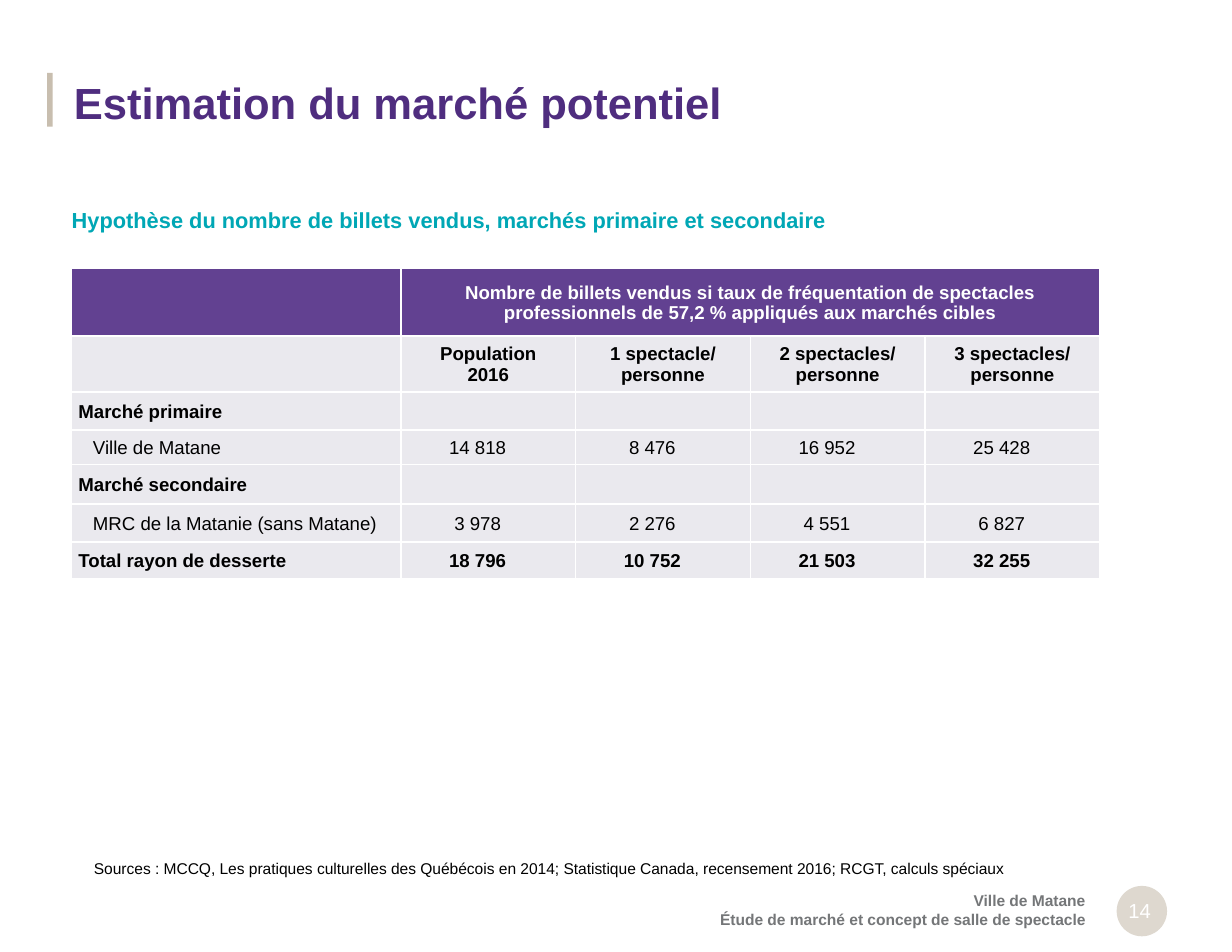
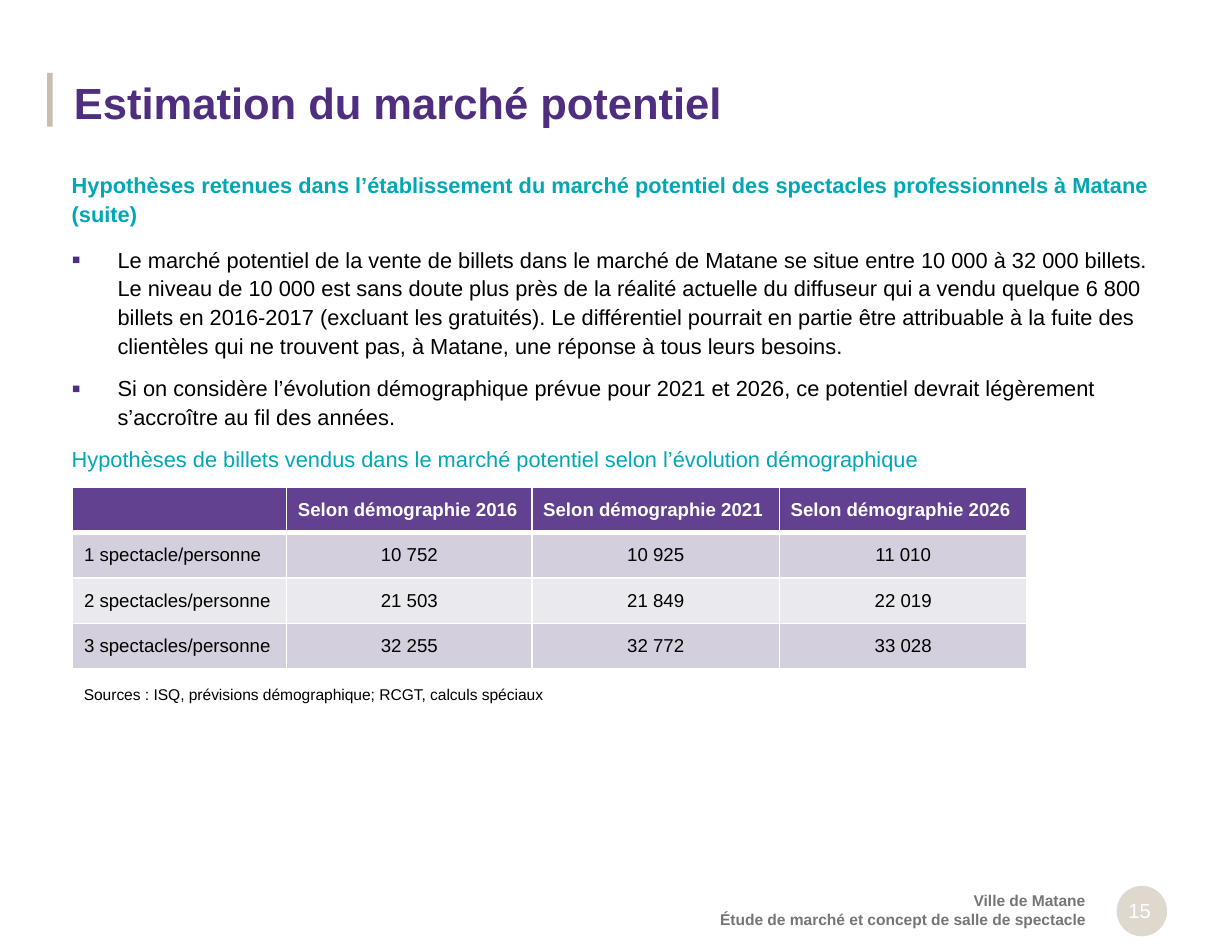
import copy
from dataclasses import dataclass
from typing import Any, Optional

import pptx
import pptx.dml.color
import pptx.enum.shapes
import pptx.enum.text
import pptx.oxml
import pptx.oxml.ns
import pptx.util
from lxml import etree

Inches = pptx.util.Inches
Align = pptx.enum.text.PP_ALIGN
Anchor = pptx.enum.text.MSO_ANCHOR
Preset = pptx.enum.shapes.MSO_SHAPE
qn = pptx.oxml.ns.qn


@dataclass(frozen=True)
class Theme:
    font: str = "Arial"
    purple: str = "4F2D7F"
    header: str = "624191"
    teal: str = "00A7B5"
    sand: str = "C8BEAF"
    disc: str = "DED8CF"
    grey: str = "747678"
    light: str = "EAE9EE"
    band: str = "D3CFDC"
    white: str = "FFFFFF"
    black: str = "000000"
    title_size: float = 28
    body_size: float = 14
    page_size: float = 13
    table_size: float = 12
    small_size: float = 10


THEME = Theme()


@dataclass(frozen=True)
class Box:
    left: float
    top: float
    width: float
    height: float

    def lengths(self) -> tuple:
        return tuple(Inches(v) for v in (self.left, self.top, self.width, self.height))


@dataclass(frozen=True)
class BodyItem:
    text: str
    color: str = THEME.black
    bold: bool = False
    bullet: bool = False
    space: float = 4.4


@dataclass(frozen=True)
class CellStyle:
    fill: str
    color: str = THEME.black
    bold: bool = False
    align: Any = Align.LEFT
    insets: tuple = (0.1, 0.05, 0.1, 0.05)


@dataclass(frozen=True)
class Grid:
    box: Box
    columns: tuple
    heights: tuple
    rows: tuple
    header_rule: float = 1


def write(paragraph: Any, text: str, *, size: float, color: str = THEME.black,
          bold: bool = False, align: Any = Align.LEFT, spacing: Any = None,
          before: float = 0, after: float = 0) -> None:
    paragraph.text = text
    paragraph.alignment = align
    paragraph.space_before = pptx.util.Pt(before)
    paragraph.space_after = pptx.util.Pt(after)
    if spacing is not None:
        paragraph.line_spacing = spacing
    for run in paragraph.runs:
        run.font.name = THEME.font
        run.font.size = pptx.util.Pt(size)
        run.font.bold = bold
        run.font.color.rgb = pptx.dml.color.RGBColor.from_string(color)
    for line_break in paragraph._p.findall(qn("a:br")):
        line_break.append(copy.deepcopy(paragraph.runs[0]._r.rPr))
    if not text:
        etree.SubElement(paragraph._p, qn("a:endParaRPr"), sz=str(int(size * 100)))


def set_bullet(paragraph: Any, visible: bool) -> None:
    props = paragraph._p.get_or_add_pPr()
    indent = Inches(0.41) if visible else 0
    props.set("marL", str(indent))
    props.set("indent", str(-indent))
    if not visible:
        etree.SubElement(props, qn("a:buNone"))
        return
    color = etree.SubElement(props, qn("a:buClr"))
    etree.SubElement(color, qn("a:srgbClr"), val=THEME.purple)
    etree.SubElement(props, qn("a:buSzPct"), val="120000")
    etree.SubElement(props, qn("a:buFont"), typeface=THEME.font)
    etree.SubElement(props, qn("a:buChar"), char="▪")


def set_frame(frame: Any, right: float = 0, left: float = 0) -> None:
    frame.word_wrap = True
    frame.auto_size = pptx.enum.text.MSO_AUTO_SIZE.NONE
    frame.vertical_anchor = Anchor.TOP
    frame.margin_left, frame.margin_right = Inches(left), Inches(right)
    frame.margin_top = frame.margin_bottom = Inches(0.05)


def place(holder: Any, box: Box) -> None:
    holder.left, holder.top, holder.width, holder.height = box.lengths()


def add_label(slide: Any, box: Box, text: str, *, side: float = 0, **style: Any) -> None:
    frame = slide.shapes.add_textbox(*box.lengths()).text_frame
    set_frame(frame, side, side)
    write(frame.paragraphs[0], text, **style)


def add_accent(slide: Any, preset: Any, box: Box, color: str) -> None:
    accent = slide.shapes.add_shape(preset, *box.lengths())
    accent.shadow.inherit = False
    accent.fill.solid()
    accent.fill.fore_color.rgb = pptx.dml.color.RGBColor.from_string(color)
    accent.line.fill.background()


def add_page(deck: Any, number: int, body_top: float, items: tuple) -> Any:
    slide = deck.slides.add_slide(deck.slide_layouts[1])
    add_accent(slide, Preset.RECTANGLE, Box(0.42, 0.65, 0.05, 0.48), THEME.sand)
    add_label(slide, Box(5.58, 7.91, 4.11, 0.44),
              "Ville de Matane\vÉtude de marché et concept de salle de spectacle",
              size=THEME.small_size, color=THEME.grey, bold=True, align=Align.RIGHT)
    add_accent(slide, Preset.OVAL, Box(9.97, 7.91, 0.45, 0.45), THEME.disc)
    add_label(slide, Box(9.87, 7.97, 0.61, 0.27), str(number), size=THEME.page_size,
              color=THEME.white, align=Align.CENTER)
    title, body = slide.shapes.title, slide.placeholders[1]
    place(title, Box(0.66, 0.58, 9.75, 0.67))
    set_frame(title.text_frame)
    write(title.text_frame.paragraphs[0], "Estimation du marché potentiel",
          size=THEME.title_size, color=THEME.purple, bold=True,
          spacing=pptx.util.Pt(37.4))
    place(body, Box(0.64, body_top, 9.75, 5.32))
    set_frame(body.text_frame, right=0.1)
    for index, item in enumerate(items):
        paragraph = body.text_frame.add_paragraph() if index else body.text_frame.paragraphs[0]
        set_bullet(paragraph, item.bullet)
        write(paragraph, item.text, size=THEME.body_size, color=item.color,
              bold=item.bold, spacing=1.1, before=item.space if index else 0,
              after=item.space)
    return slide


def set_borders(cell: Any, top: float, bottom: float) -> None:
    props = cell._tc.get_or_add_tcPr()
    for side, width in (("L", 1), ("R", 1), ("T", top), ("B", bottom)):
        line = etree.SubElement(props, qn(f"a:ln{side}"), w=str(pptx.util.Pt(width)))
        fill = etree.SubElement(line, qn("a:solidFill"))
        etree.SubElement(fill, qn("a:srgbClr"), val=THEME.white)


def fill_cell(cell: Any, text: str, style: CellStyle) -> None:
    cell.fill.solid()
    cell.fill.fore_color.rgb = pptx.dml.color.RGBColor.from_string(style.fill)
    cell.vertical_anchor = Anchor.MIDDLE
    cell.margin_left, cell.margin_top, cell.margin_right, cell.margin_bottom = (
        Inches(v) for v in style.insets)
    write(cell.text_frame.paragraphs[0], text, size=THEME.table_size,
          color=style.color, bold=style.bold, align=style.align)


def add_grid(slide: Any, grid: Grid, span: Optional[tuple] = None) -> None:
    table = slide.shapes.add_table(len(grid.rows), len(grid.columns),
                                   *grid.box.lengths()).table
    for column, width in zip(table.columns, grid.columns):
        column.width = Inches(width)
    for row, height in zip(table.rows, grid.heights):
        row.height = Inches(height)
    if span:
        table.cell(0, span[0]).merge(table.cell(0, span[1]))
    for r, (texts, label_style, value_style) in enumerate(grid.rows):
        for c, text in enumerate(texts):
            cell = table.cell(r, c)
            set_borders(cell, grid.header_rule if r == 1 else 1,
                        grid.header_rule if r == 0 else 1)
            fill_cell(cell, text, value_style if c else label_style)


def sales_grid() -> Grid:
    tight = (0.01, 0.01, 0.01, 0)
    head = CellStyle(THEME.header, THEME.white, True, Align.CENTER, tight)
    subhead = CellStyle(THEME.light, bold=True, align=Align.CENTER, insets=tight)
    group = CellStyle(THEME.light, bold=True, insets=(0.06, 0.01, 0.01, 0))
    place_name = CellStyle(THEME.light, insets=(0.19, 0.01, 0.01, 0))
    shifted = (0.01, 0.01, 0.2, 0)
    count = CellStyle(THEME.light, align=Align.CENTER, insets=shifted)
    total = CellStyle(THEME.light, bold=True, align=Align.CENTER, insets=shifted)
    blank = ("",) * 4
    question = ("Nombre de billets vendus si taux de fréquentation de spectacles "
                "professionnels de 57,2 % appliqués aux marchés cibles")
    return Grid(
        Box(0.64, 2.4, 9.19, 2.77), (2.94,) + (1.56,) * 4,
        (0.6, 0.5, 0.34, 0.31, 0.35, 0.34, 0.33),
        (
            (("", question, "", "", ""), head, head),
            (("", "Population\v2016", "1 spectacle/\vpersonne", "2 spectacles/\vpersonne",
              "3 spectacles/\vpersonne"), subhead, subhead),
            (("Marché primaire", *blank), group, count),
            (("Ville de Matane", "14 818", "8 476", "16 952", "25 428"), place_name, count),
            (("Marché secondaire", *blank), group, count),
            (("MRC de la Matanie (sans Matane)", "3 978", "2 276", "4 551", "6 827"),
             place_name, count),
            (("Total rayon de desserte", "18 796", "10 752", "21 503", "32 255"), group, total),
        ))


def forecast_grid() -> Grid:
    head = CellStyle(THEME.header, THEME.white, True)
    years = tuple(f"Selon démographie {year}" for year in (2016, 2021, 2026))
    forecasts = (
        ("1 spectacle/personne", "10 752", "10 925", "11 010"),
        ("2 spectacles/personne", "21 503", "21 849", "22 019"),
        ("3 spectacles/personne", "32 255", "32 772", "33 028"),
    )
    rows = [(("", *years), head, head)]
    for index, texts in enumerate(forecasts):
        fill = THEME.light if index % 2 else THEME.band
        rows.append((texts, CellStyle(fill), CellStyle(fill, align=Align.CENTER)))
    box = Box(0.65, 4.35, 8.52, 1.62)
    return Grid(box, (1.91, 2.19, 2.21, 2.21), (box.height / len(rows),) * len(rows),
                tuple(rows), header_rule=3)


def main() -> None:
    deck = pptx.Presentation()
    deck.slide_width, deck.slide_height = Inches(11), Inches(8.5)

    sales = add_page(deck, 14, 1.77, (
        BodyItem("Hypothèse du nombre de billets vendus, marchés primaire et secondaire",
                 THEME.teal, bold=True),
    ))
    add_grid(sales, sales_grid(), span=(1, 4))
    add_label(sales, Box(0.74, 7.62, 9.43, 0.27),
              "Sources : MCCQ, Les pratiques culturelles des Québécois en 2014; "
              "Statistique Canada, recensement 2016; RCGT, calculs spéciaux",
              side=0.1, size=THEME.small_size)

    forecast = add_page(deck, 15, 1.46, (
        BodyItem("Hypothèses retenues dans l’établissement du marché potentiel des "
                 "spectacles professionnels à Matane (suite)",
                 THEME.teal, bold=True, space=6.6),
        BodyItem("Le marché potentiel de la vente de billets dans le marché de Matane se "
                 "situe entre 10 000 à 32 000 billets. Le niveau de 10 000 est sans doute "
                 "plus près de la réalité actuelle du diffuseur qui a vendu quelque 6 800 "
                 "billets en 2016-2017 (excluant les gratuités). Le différentiel pourrait "
                 "en partie être attribuable à la fuite des clientèles qui ne trouvent pas, "
                 "à Matane, une réponse à tous leurs besoins.", bullet=True),
        BodyItem("Si on considère l’évolution démographique prévue pour 2021 et 2026, ce "
                 "potentiel devrait légèrement s’accroître au fil des années.", bullet=True),
        BodyItem("Hypothèses de billets vendus dans le marché potentiel selon l’évolution "
                 "démographique", THEME.teal),
    ))
    add_grid(forecast, forecast_grid())
    add_label(forecast, Box(0.65, 6.07, 9.43, 0.27),
              "Sources : ISQ, prévisions démographique; RCGT, calculs spéciaux",
              side=0.1, size=THEME.small_size)

    deck.save("out.pptx")


if __name__ == "__main__":
    main()
